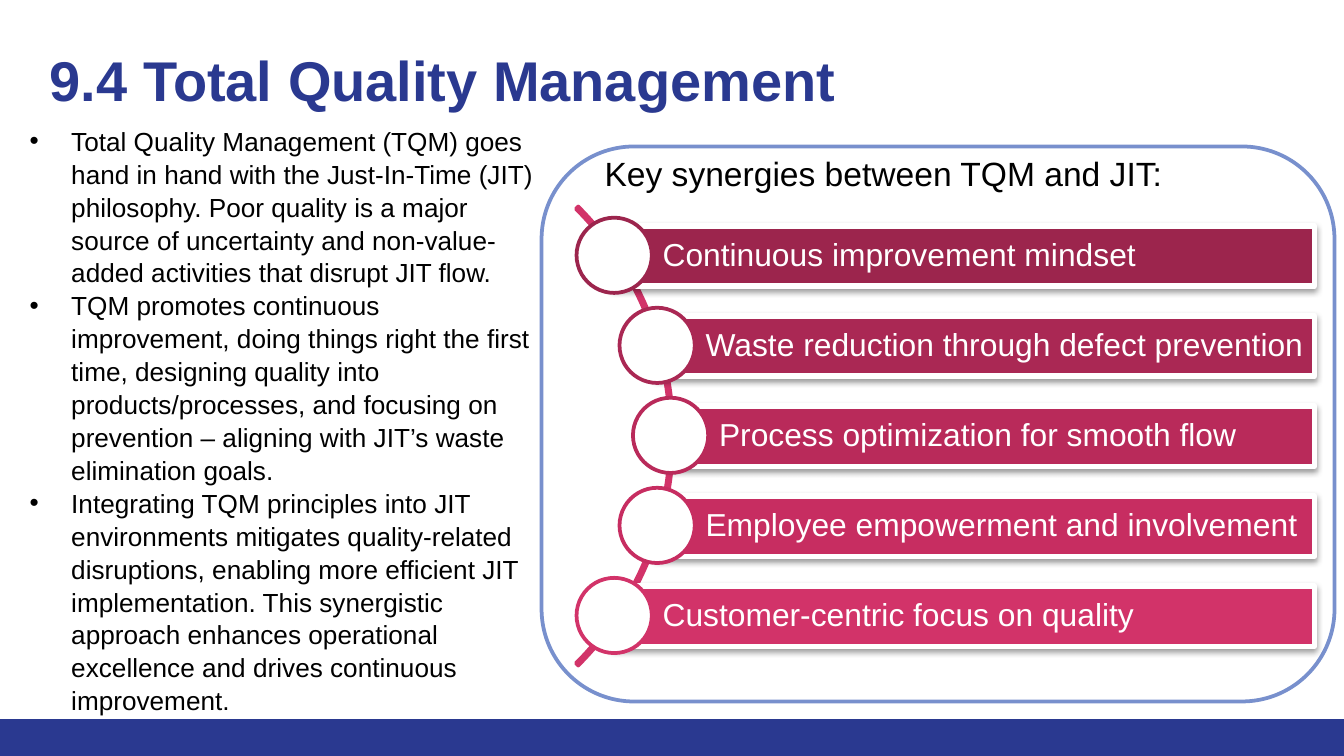
from lxml import etree
from pptx import Presentation
from pptx import util as u
from pptx.dml.color import RGBColor
from pptx.enum import shapes, text
from pptx.oxml import ns

PX = 9144
NAVY = RGBColor(0x2A, 0x39, 0x90)
PERIWINKLE = RGBColor(0x78, 0x90, 0xCD)
BLACK = RGBColor(0, 0, 0)
WHITE = RGBColor(0xFF, 0xFF, 0xFF)
ROSE = RGBColor(0xD2, 0x33, 0x69)
BAR_COLOURS = [
    RGBColor(0x9C, 0x25, 0x4D),
    RGBColor(0xAA, 0x28, 0x54),
    RGBColor(0xB9, 0x2A, 0x5A),
    RGBColor(0xC7, 0x2D, 0x61),
    ROSE,
]
BAR_INDENTS = [54, 86, 96, 86, 54]
SYNERGIES = [
    "Continuous improvement mindset",
    "Waste reduction through defect prevention",
    "Process optimization for smooth flow",
    "Employee empowerment and involvement",
    "Customer-centric focus on quality",
]
POINTS = [
    "Total Quality Management (TQM) goes hand in hand with the Just-In-Time (JIT) philosophy. "
    "Poor quality is a major source of uncertainty and non-value-added activities that disrupt "
    "JIT flow.",
    "TQM promotes continuous improvement, doing things right the first time, designing quality "
    "into products/processes, and focusing on prevention – aligning with JIT’s waste "
    "elimination goals.",
    "Integrating TQM principles into JIT environments mitigates quality-related disruptions, "
    "enabling more efficient JIT implementation. This synergistic approach enhances operational "
    "excellence and drives continuous improvement.",
]


def apply(target, values):
    """Set each named attribute of the target."""
    for name, value in values.items():
        setattr(target, name, value)


def place(shape, box):
    """Move and size a shape to a box in px."""
    names = ("left", "top", "width", "height")
    apply(shape, {name: length * PX for name, length in zip(names, box)})


def add_shape(page, kind, box, fill=None, line=None, weight=2):
    """Add a preset shape with plain fill and line."""
    shape = page.shapes.add_shape(kind, *(length * PX for length in box))
    shape.shadow.inherit = False
    if fill is None:
        shape.fill.background()
    else:
        shape.fill.solid()
        shape.fill.fore_color.rgb = fill
    if line is None:
        shape.line.fill.background()
    else:
        shape.line.color.rgb = line
        shape.line.width = u.Pt(weight)
    return shape


def set_frame(frame, insets=(10, 5, 10, 5), anchor=text.MSO_ANCHOR.TOP):
    """Set the insets, wrapping and anchor of a text frame."""
    names = ("margin_left", "margin_top", "margin_right", "margin_bottom")
    apply(frame, {name: inset * PX for name, inset in zip(names, insets)})
    apply(frame, {"word_wrap": True, "auto_size": text.MSO_AUTO_SIZE.NONE,
                  "vertical_anchor": anchor})


def write(para, words, size, colour, bold=False, spacing=1.0):
    """Write one left-aligned run into a paragraph."""
    apply(para, {"alignment": text.PP_ALIGN.LEFT, "line_spacing": spacing,
                 "space_before": u.Pt(0)})
    span = para.add_run()
    span.text = words
    apply(span.font, {"name": "Arial", "size": u.Pt(size), "bold": bold})
    span.font.color.rgb = colour


def add_drop_shadow(shape):
    """Give a shape a soft shadow below it."""
    effects = shape._element.spPr.find(ns.qn("a:effectLst"))
    shadow = etree.SubElement(effects, ns.qn("a:outerShdw"), blurRad=str(u.Pt(3.1)),
                              dist=str(u.Pt(1.6)), dir="5400000", rotWithShape="0")
    colour = etree.SubElement(shadow, ns.qn("a:srgbClr"), val=str(BLACK))
    etree.SubElement(colour, ns.qn("a:alpha"), val="38000")


def fill_title(page, box):
    """Place the slide title."""
    title = page.shapes.title
    place(title, box)
    set_frame(title.text_frame, (10, 14, 10, 10))
    write(title.text_frame.paragraphs[0], "9.4 Total Quality Management", 30, NAVY, True)


def fill_body(page, box):
    """Place the bulleted list."""
    body = page.placeholders[1]
    place(body, box)
    frame = body.text_frame
    set_frame(frame)
    for index, point in enumerate(POINTS):
        para = frame.add_paragraph() if index else frame.paragraphs[0]
        properties = para._p.get_or_add_pPr()
        properties.set("marL", str(31 * PX))
        properties.set("indent", str(-31 * PX))
        etree.SubElement(properties, ns.qn("a:buChar"), char="•")
        write(para, point, 14, BLACK, spacing=1.05)


def add_bar(page, box, words, colour):
    """Add one labelled bar with a circle on its left edge."""
    left, top, width, height = box
    bar = add_shape(page, shapes.MSO_SHAPE.RECTANGLE, box, colour, WHITE, 3)
    add_drop_shadow(bar)
    set_frame(bar.text_frame, (36, 5, 2, 5), text.MSO_ANCHOR.MIDDLE)
    write(bar.text_frame.paragraphs[0], words, 17, WHITE, spacing=0.9)
    circle = (left - 28, top - 6, 56, 56)
    add_shape(page, shapes.MSO_SHAPE.OVAL, circle, WHITE, colour)


def add_synergies(page, box):
    """Add the rounded panel with its heading, arc and bars."""
    left, top, width, height = box
    add_shape(page, shapes.MSO_SHAPE.ROUNDED_RECTANGLE, box, WHITE, PERIWINKLE)
    arc = add_shape(page, shapes.MSO_SHAPE.BLOCK_ARC, (left - 385, top - 26, 483, 483), line=ROSE)
    for index, value in enumerate((189, 27, 0.005)):
        arc.adjustments[index] = value
    for index, (words, colour, indent) in enumerate(zip(SYNERGIES, BAR_COLOURS, BAR_INDENTS)):
        bar = (left + indent, top + 59 + 67 * index, width - 15 - indent, 45)
        add_bar(page, bar, words, colour)
    heading = page.shapes.add_textbox(*(n * PX for n in (left + 37, top, 500, 40)))
    set_frame(heading.text_frame)
    write(heading.text_frame.paragraphs[0], "Key synergies between TQM and JIT:", 18, BLACK)


def main():
    """Build the slide and save it."""
    deck = Presentation()
    deck.slide_width = 1000 * PX
    deck.slide_height = deck.slide_width * 9 // 16
    page = deck.slides.add_slide(deck.slide_layouts[1])
    add_shape(page, shapes.MSO_SHAPE.RECTANGLE, (0, 535, 1000, 28), NAVY)
    fill_title(page, (27, 20, 948, 89))
    fill_body(page, (12, 87, 400, 434))
    add_synergies(page, (403, 109, 590, 413))
    deck.save("out.pptx")


if __name__ == "__main__":
    main()
